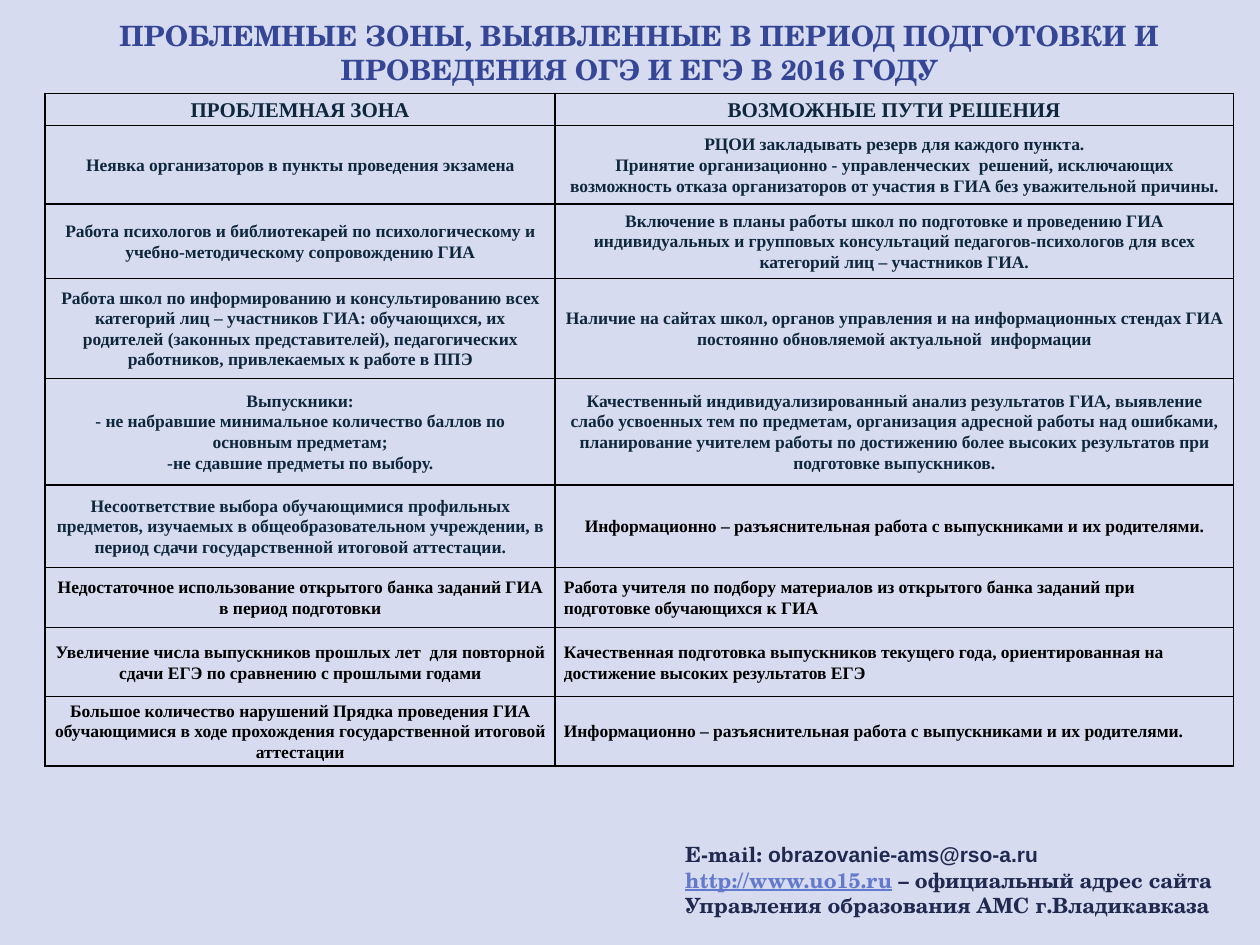
import pptx
import pptx.util
import pptx.dml.color
import pptx.enum.text
import pptx.oxml
from dataclasses import dataclass
from pptx.oxml import ns

Pt = pptx.util.Pt
ALIGN = pptx.enum.text.PP_ALIGN
ANCHOR = pptx.enum.text.MSO_ANCHOR
SIZE = pptx.enum.text.MSO_AUTO_SIZE


@dataclass(frozen=True)
class Theme:
    back: str = "D6DBEF"
    title: str = "354696"
    note: str = "202A51"
    link: str = "6379CE"
    ink: str = "0F273D"
    black: str = "000000"
    school: str = "TeX Gyre Schola"
    serif: str = "Times New Roman"
    sans: str = "Arial"
    big: int = 16
    mid: int = 12
    small: int = 10


T = Theme()
COLS = (291.5, 387.5)
ROWS = (18, 45, 42.5, 57, 61, 47, 34.5, 39.5, 39.5)
CELLS = [
    ("ПРОБЛЕМНАЯ ЗОНА", "ВОЗМОЖНЫЕ ПУТИ РЕШЕНИЯ"),
    ("Неявка организаторов в пункты проведения экзамена",
     "РЦОИ закладывать резерв для каждого пункта.\n"
     "Принятие организационно - управленческих  решений, исключающих "
     "возможность отказа организаторов от участия в ГИА без уважительной причины."),
    ("Работа психологов и библиотекарей по психологическому и "
     "учебно-методическому сопровождению ГИА",
     "Включение в планы работы школ по подготовке и проведению ГИА "
     "индивидуальных и групповых консультаций педагогов-психологов для всех "
     "категорий лиц – участников ГИА."),
    ("Работа школ по информированию и консультированию всех категорий лиц – "
     "участников ГИА: обучающихся, их родителей (законных представителей), "
     "педагогических работников, привлекаемых к работе в ППЭ",
     "Наличие на сайтах школ, органов управления и на информационных стендах ГИА "
     "постоянно обновляемой актуальной  информации"),
    ("Выпускники:\n- не набравшие минимальное количество баллов по основным "
     "предметам;\n-не сдавшие предметы по выбору.",
     "Качественный индивидуализированный анализ результатов ГИА, выявление слабо "
     "усвоенных тем по предметам, организация адресной работы над ошибками, "
     "планирование учителем работы по достижению более высоких результатов при "
     "подготовке выпускников."),
    ("Несоответствие выбора обучающимися профильных предметов, изучаемых в "
     "общеобразовательном учреждении, в период сдачи государственной итоговой "
     "аттестации.",
     "Информационно – разъяснительная работа с выпускниками и их родителями."),
    ("Недостаточное использование открытого банка заданий ГИА в период подготовки",
     "Работа учителя по подбору материалов из открытого банка заданий при "
     "подготовке обучающихся к ГИА"),
    ("Увеличение числа выпускников прошлых лет  для повторной сдачи ЕГЭ по "
     "сравнению с прошлыми годами",
     "Качественная подготовка выпускников текущего года, ориентированная на "
     "достижение высоких результатов ЕГЭ"),
    ("Большое количество нарушений Прядка проведения ГИА обучающимися в ходе "
     "прохождения государственной итоговой аттестации",
     "Информационно – разъяснительная работа с выпускниками и их родителями."),
]


def write(frame, paras, size=T.small, face=T.serif, ink=T.ink,
          align=ALIGN.LEFT, line=1.0, after=0):
    """Fill frame; each paragraph is a list of (text, changes) runs."""
    frame.word_wrap = True
    for i, runs in enumerate(paras):
        para = frame.add_paragraph() if i else frame.paragraphs[0]
        para.alignment = align
        para.line_spacing = line
        para.space_before, para.space_after = Pt(0), Pt(after)
        for text, change in runs:
            run = para.add_run()
            run.text = text
            font = run.font
            font.size, font.bold = Pt(size), True
            font.name = change.get("face", face)
            font.color.rgb = pptx.dml.color.RGBColor.from_string(change.get("ink", ink))
            if change.get("under"):
                font.underline = True


def edge(cell):
    """Draw the four borders of a cell."""
    props = cell._tc.get_or_add_tcPr()
    for side in "LRTB":
        props.append(pptx.oxml.parse_xml(
            f'<a:ln{side} {ns.nsdecls("a")} w="{Pt(1)}"><a:solidFill>'
            f'<a:srgbClr val="{T.black}"/></a:solidFill></a:ln{side}>'))


def head(slide, x, y, w, h):
    shape = slide.shapes.title
    shape.left, shape.top, shape.width, shape.height = map(Pt, (x, y, w, h))
    frame = shape.text_frame
    frame.auto_size = SIZE.NONE
    frame.vertical_anchor = ANCHOR.TOP
    text = "ПРОБЛЕМНЫЕ ЗОНЫ, ВЫЯВЛЕННЫЕ В ПЕРИОД ПОДГОТОВКИ И ПРОВЕДЕНИЯ ОГЭ И ЕГЭ В 2016 ГОДУ"
    write(frame, [[(text, {})]], size=T.big, face=T.school, ink=T.title,
          align=ALIGN.CENTER)


def grid(slide, x, y):
    table = slide.shapes.add_table(len(ROWS), len(COLS), Pt(x), Pt(y),
                                   Pt(sum(COLS)), Pt(sum(ROWS))).table
    table.first_row = table.horz_banding = False
    for col, width in zip(table.columns, COLS):
        col.width = Pt(width)
    for r, (row, height) in enumerate(zip(table.rows, ROWS)):
        row.height = Pt(height)
        for c, cell in enumerate(row.cells):
            edge(cell)
            cell.fill.background()
            cell.margin_left = cell.margin_right = Pt(5)
            cell.margin_top = cell.margin_bottom = Pt(2)
            cell.vertical_anchor = ANCHOR.MIDDLE if r else ANCHOR.TOP
            late = r > 5
            write(cell.text_frame,
                  [[(text, {})] for text in CELLS[r][c].split("\n")],
                  size=T.small if r else T.mid,
                  ink=T.black if late or (r, c) == (5, 1) else T.ink,
                  align=ALIGN.LEFT if late and c else ALIGN.CENTER,
                  line=1.07, after=8 if late else 0)


def foot(slide, x, y, w, h):
    box = slide.shapes.add_textbox(Pt(x), Pt(y), Pt(w), Pt(h))
    write(box.text_frame, [
        [("E-mail: ", {}), ("obrazovanie-ams@rso-a.ru", {"face": T.sans})],
        [("http://www.uo15.ru", {"ink": T.link, "under": True}),
         (" – официальный адрес сайта Управления образования АМС г.Владикавказа", {})],
    ], size=T.mid, face=T.school, ink=T.note)


def main():
    deck = pptx.Presentation()
    deck.slide_width, deck.slide_height = Pt(720), Pt(540)
    slide = deck.slides.add_slide(deck.slide_layouts[5])
    fill = slide.background.fill
    fill.solid()
    fill.fore_color.rgb = pptx.dml.color.RGBColor.from_string(T.back)
    head(slide, 20, 7, 691, 46)
    grid(slide, 25.75, 53.5)
    foot(slide, 384.5, 477.5, 335.5, 51)
    deck.save("out.pptx")


if __name__ == "__main__":
    main()
